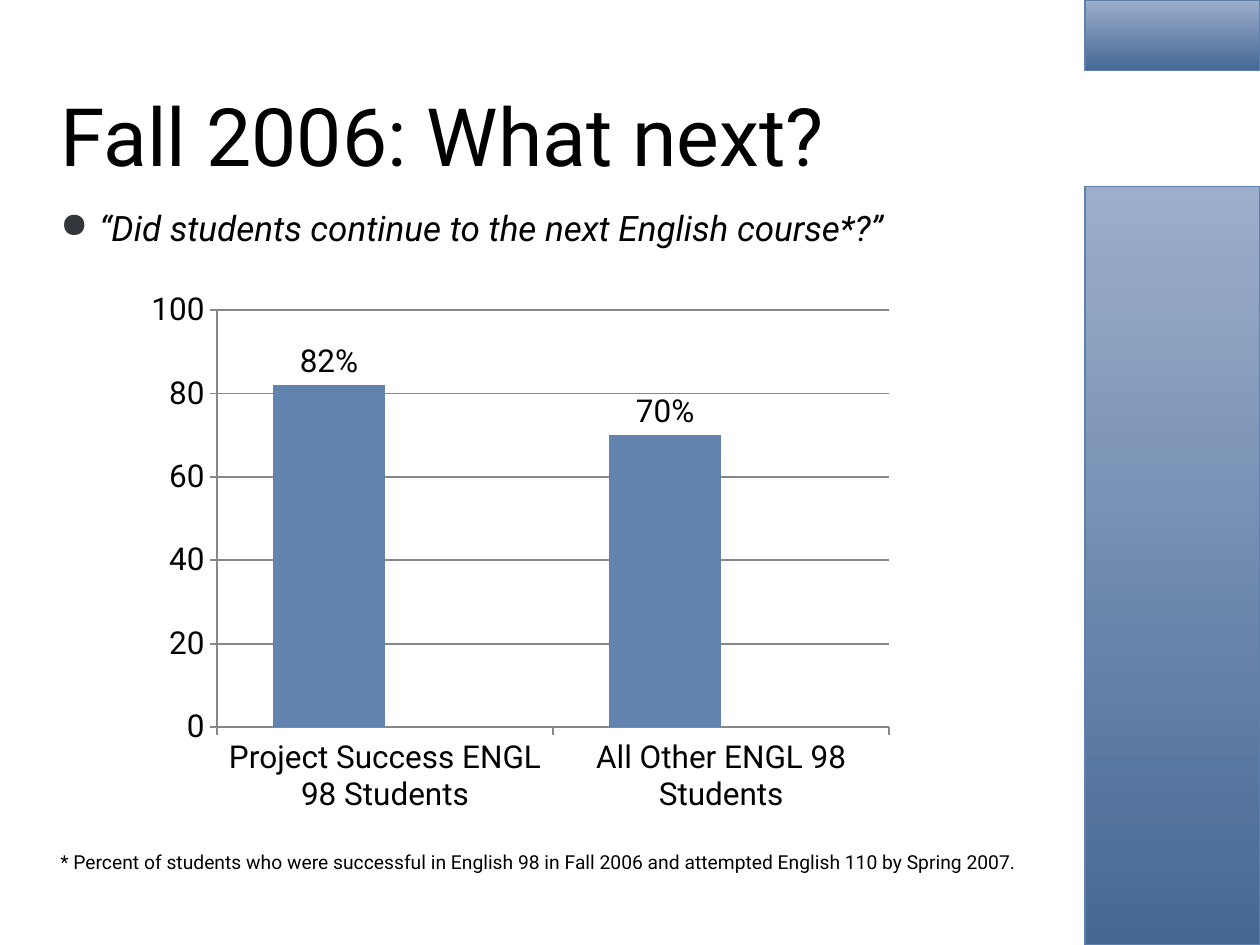
"""Build the Fall 2006 slide on students continuing to the next English course."""
import pptx
import pptx.chart.data
import pptx.dml.color
import pptx.enum.chart
import pptx.enum.shapes
import pptx.enum.text
import pptx.util
from lxml import etree

COLORS = {
    "text": "000000",
    "bullet": "32363B",
    "band_dark": "456894",
    "band_light": "9DAECB",
    "band_line": "5E80AB",
    "success": "6283AD",
    "other": "324966",
    "axis": "878787",
}
FONT = "Roboto"
Inches, Pt = pptx.util.Inches, pptx.util.Pt
LEFT = 0.38
BAND_LEFT, BAND_WIDTH = 8.61, 1.39


def color(name):
    return pptx.dml.color.RGBColor.from_string(COLORS[name])


def style(font, size, italic=False):
    font.name, font.size, font.italic = FONT, Pt(size), italic
    font.color.rgb = color("text")


deck = pptx.Presentation()
deck.slide_width, deck.slide_height = Inches(10), Inches(7.5)
page = deck.slides.add_slide(deck.slide_layouts.get_by_name("Title Only"))

for top, height in [(1.48, 6.02), (0, 0.56)]:
    band = page.shapes.add_shape(
        pptx.enum.shapes.MSO_SHAPE.RECTANGLE,
        Inches(BAND_LEFT), Inches(top), Inches(BAND_WIDTH), Inches(height))
    band.shadow.inherit = False
    band.fill.gradient()
    band.fill.gradient_angle = 90
    for stop, name in zip(band.fill.gradient_stops, ["band_dark", "band_light"]):
        stop.color.rgb = color(name)
    band.line.color.rgb = color("band_line")
    band.line.width = Pt(1)

title = page.shapes.title
title.left, title.top = Inches(LEFT), Inches(0.53)
title.width, title.height = Inches(7.75), Inches(1.07)
title.text_frame.text = "Fall 2006: What next?"
title.text_frame.vertical_anchor = pptx.enum.text.MSO_ANCHOR.MIDDLE
para = title.text_frame.paragraphs[0]
para.alignment = pptx.enum.text.PP_ALIGN.LEFT
style(para.runs[0].font, 46)

question = page.shapes.add_textbox(Inches(LEFT), Inches(1.59), Inches(7.75), Inches(0.5))
question.text_frame.word_wrap = True
question.text_frame.text = "“Did students continue to the next English course*?”"
para = question.text_frame.paragraphs[0]
props = para._p.get_or_add_pPr()
props.set("marL", str(Inches(0.31)))
props.set("indent", str(-Inches(0.31)))
namespace = "{http://schemas.openxmlformats.org/drawingml/2006/main}"
bullet_color = etree.SubElement(props, namespace + "buClr")
etree.SubElement(bullet_color, namespace + "srgbClr", val=COLORS["bullet"])
etree.SubElement(props, namespace + "buChar", char="●")
style(para.runs[0].font, 20, italic=True)

data = pptx.chart.data.CategoryChartData()
data.categories = ["Project Success ENGL 98 Students", "All Other ENGL 98 Students"]
data.add_series("Series 1", [82, 70])
data.add_series("Series 2", [None, None])
chart = page.shapes.add_chart(
    pptx.enum.chart.XL_CHART_TYPE.COLUMN_CLUSTERED,
    Inches(1.08), Inches(2.23), Inches(6.1), Inches(4.31), data).chart
chart.has_legend = False
chart.has_title = False
style(chart.font, 18)

plot = chart.plots[0]
plot.gap_width, plot.overlap = 100, 0
plot.vary_by_categories = False
for series, name in zip(plot.series, ["success", "other"]):
    series.format.fill.solid()
    series.format.fill.fore_color.rgb = color(name)
labels = plot.series[0].data_labels
labels.show_value = True
labels.number_format, labels.number_format_is_linked = '0"%"', False
labels.position = pptx.enum.chart.XL_LABEL_POSITION.OUTSIDE_END
style(labels.font, 18)

scale = chart.value_axis
scale.minimum_scale, scale.maximum_scale, scale.major_unit = 0, 100, 20
scale.has_major_gridlines = True
scale.tick_labels.number_format = "0"
scale.tick_labels.number_format_is_linked = False
for axis in (scale, chart.category_axis):
    axis.major_tick_mark = pptx.enum.chart.XL_TICK_MARK.OUTSIDE
for lines in (scale, chart.category_axis, scale.major_gridlines):
    lines.format.line.color.rgb = color("axis")
    lines.format.line.width = Pt(1)

footnote = page.shapes.add_textbox(Inches(LEFT), Inches(6.7), Inches(8.11), Inches(0.29))
footnote.text_frame.word_wrap = True
footnote.text_frame.text = (
    "* Percent of students who were successful in English 98 in Fall 2006 "
    "and attempted English 110 by Spring 2007.")
style(footnote.text_frame.paragraphs[0].runs[0].font, 11)

deck.save("out.pptx")
